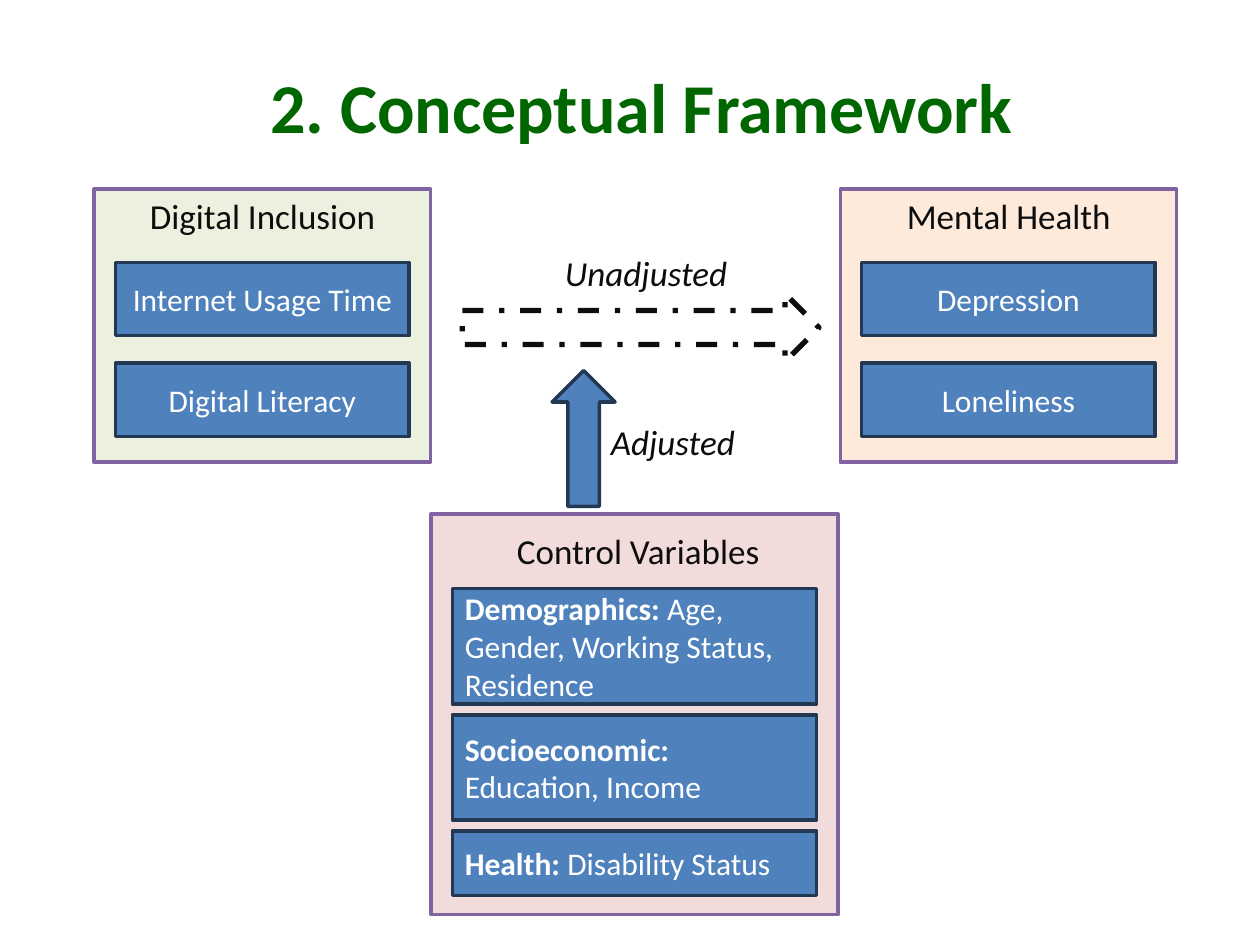
from dataclasses import dataclass

from pptx import Presentation
from pptx.dml.color import RGBColor
from pptx.enum.dml import MSO_LINE
from pptx.enum.shapes import MSO_SHAPE
from pptx.enum.text import MSO_ANCHOR, PP_ALIGN
from pptx.util import Cm, Pt


@dataclass(frozen=True)
class Theme:
    font: str = "Calibri"
    title: str = "006600"
    ink: str = "0D0D0D"
    white: str = "FFFFFF"
    box: str = "4F81BD"
    box_line: str = "233953"
    panel_line: str = "8064A2"
    title_size: int = 40
    label_size: int = 20
    box_size: int = 18
    line: int = 2
    dashed_line: int = 3


THEME = Theme()

# Content: text is a list of (words, bold) runs; all lengths are in cm
TITLE = "2. Conceptual Framework"
PANELS = [
    dict(label="Digital Inclusion", fill="EBF1DE", at=(1.9, 3.81, 6.78, 5.51),
         label_at=(2.54, 3.6), first=5.29, gap=0.55, align=PP_ALIGN.CENTER,
         boxes=[(1.48, [("Internet Usage Time", False)]),
                (1.48, [("Digital Literacy", False)])]),
    dict(label="Mental Health", fill="FDEADA", at=(16.94, 3.81, 6.78, 5.51),
         label_at=(17.58, 3.6), first=5.29, gap=0.55, align=PP_ALIGN.CENTER,
         boxes=[(1.48, [("Depression", False)]),
                (1.48, [("Loneliness", False)])]),
    dict(label="Control Variables", fill="F2DCDB", at=(8.69, 10.36, 8.2, 8.08),
         label_at=(10.11, 10.36), first=11.86, gap=0.22, align=PP_ALIGN.LEFT,
         boxes=[(2.33, [("Demographics: ", True),
                        ("Age, Gender, Working Status, Residence", False)]),
                (2.12, [("Socioeconomic: ", True), ("Education, Income", False)]),
                (1.3, [("Health: ", True), ("Disability Status", False)])]),
]
ARROW_LABELS = [("Unadjusted", (11.02, 4.93, 4.01, 1.14)),
                ("Adjusted", (11.99, 8.33, 3.15, 1.14))]
LABEL_SIZE = (5.51, 1.48)
BOX_INSET = 0.43


def color(value):
    return RGBColor.from_string(value)


def write(sp, runs, size, ink, align=PP_ALIGN.CENTER, italic=None):
    tf = sp.text_frame
    tf.word_wrap = True
    tf.vertical_anchor = MSO_ANCHOR.MIDDLE
    p = tf.paragraphs[0]
    p.alignment = align
    p.font.name = THEME.font
    p.font.size = Pt(size)
    p.font.color.rgb = color(ink)
    p.font.italic = italic
    for words, bold in runs:
        r = p.add_run()
        r.text = words
        r.font.bold = bold


def add_shape(shapes, kind, at, fill, line, width=THEME.line):
    sp = shapes.add_shape(kind, *map(Cm, at))
    sp.shadow.inherit = False
    if fill:
        sp.fill.solid()
        sp.fill.fore_color.rgb = color(fill)
    else:
        sp.fill.background()
    sp.line.color.rgb = color(line)
    sp.line.width = Pt(width)
    return sp


def add_text(shapes, text, at, size=THEME.label_size, ink=THEME.ink, bold=False, italic=None):
    write(shapes.add_textbox(*map(Cm, at)), [(text, bold)], size, ink, italic=italic)


def add_panel(shapes, panel):
    group = shapes.add_group_shape().shapes
    left, _, width, _ = panel["at"]
    add_shape(group, MSO_SHAPE.RECTANGLE, panel["at"], panel["fill"], THEME.panel_line)
    add_text(group, panel["label"], panel["label_at"] + LABEL_SIZE)
    top = panel["first"]
    for height, runs in panel["boxes"]:
        at = (left + BOX_INSET, top, width - 2 * BOX_INSET, height)
        sp = add_shape(group, MSO_SHAPE.RECTANGLE, at, THEME.box, THEME.box_line)
        write(sp, runs, THEME.box_size, THEME.white, panel["align"])
        top += height + panel["gap"]


def main():
    prs = Presentation()
    prs.slide_width, prs.slide_height = Cm(25.4), Cm(19.05)
    shapes = prs.slides.add_slide(prs.slide_layouts[6]).shapes

    # Title
    add_text(shapes, TITLE, (1.5, 1.07, 22.86, 2.11), THEME.title_size, THEME.title, bold=True)

    # Panels with their boxes
    for panel in PANELS:
        add_panel(shapes, panel)

    # Block arrows and their labels
    dashed = add_shape(shapes, MSO_SHAPE.RIGHT_ARROW, (9.32, 5.92, 7.19, 1.37),
                       None, THEME.ink, THEME.dashed_line)
    dashed.line.dash_style = MSO_LINE.DASH_DOT
    add_shape(shapes, MSO_SHAPE.UP_ARROW, (11.13, 7.47, 1.27, 2.74), THEME.box, THEME.box_line)
    for text, at in ARROW_LABELS:
        add_text(shapes, text, at, italic=True)

    prs.save("out.pptx")


if __name__ == "__main__":
    main()
